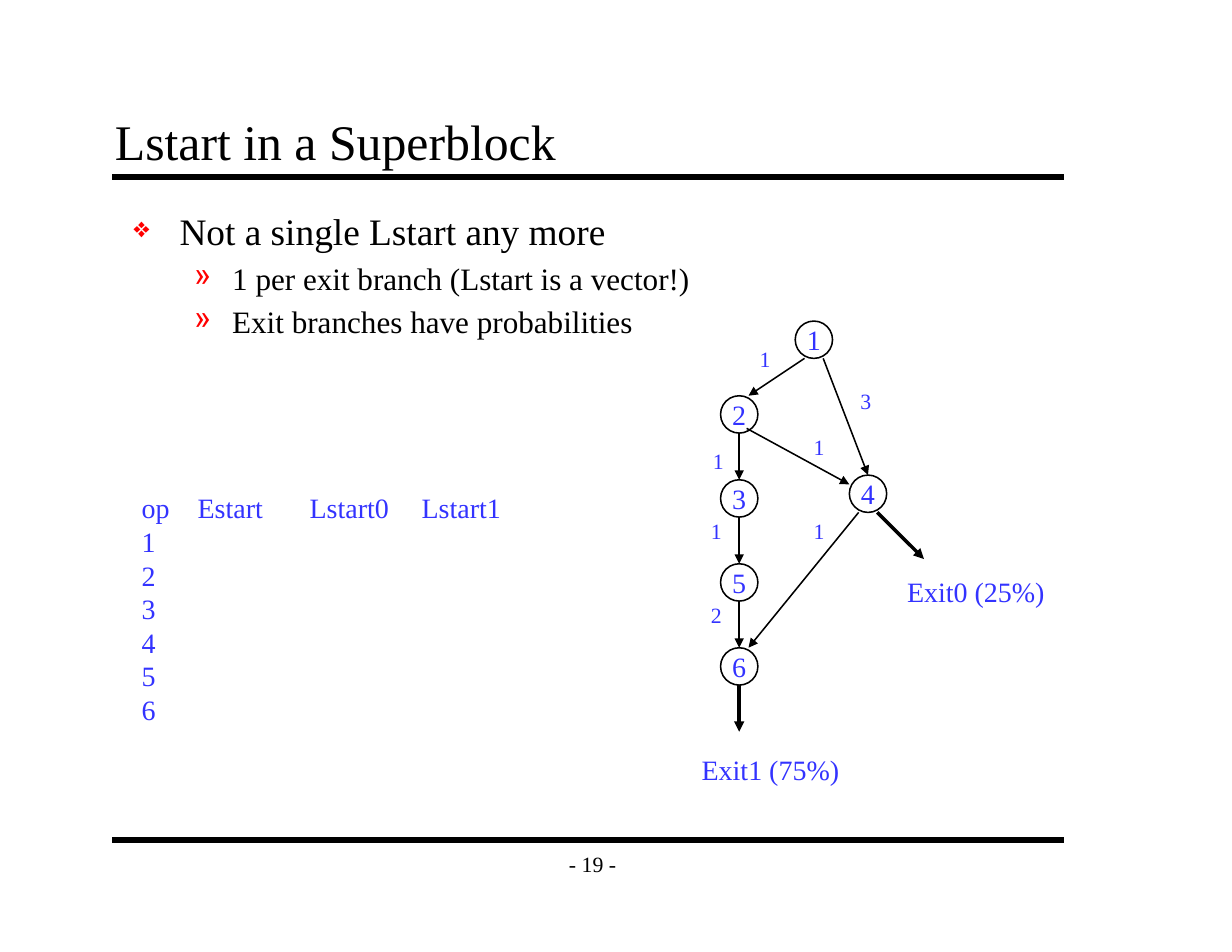
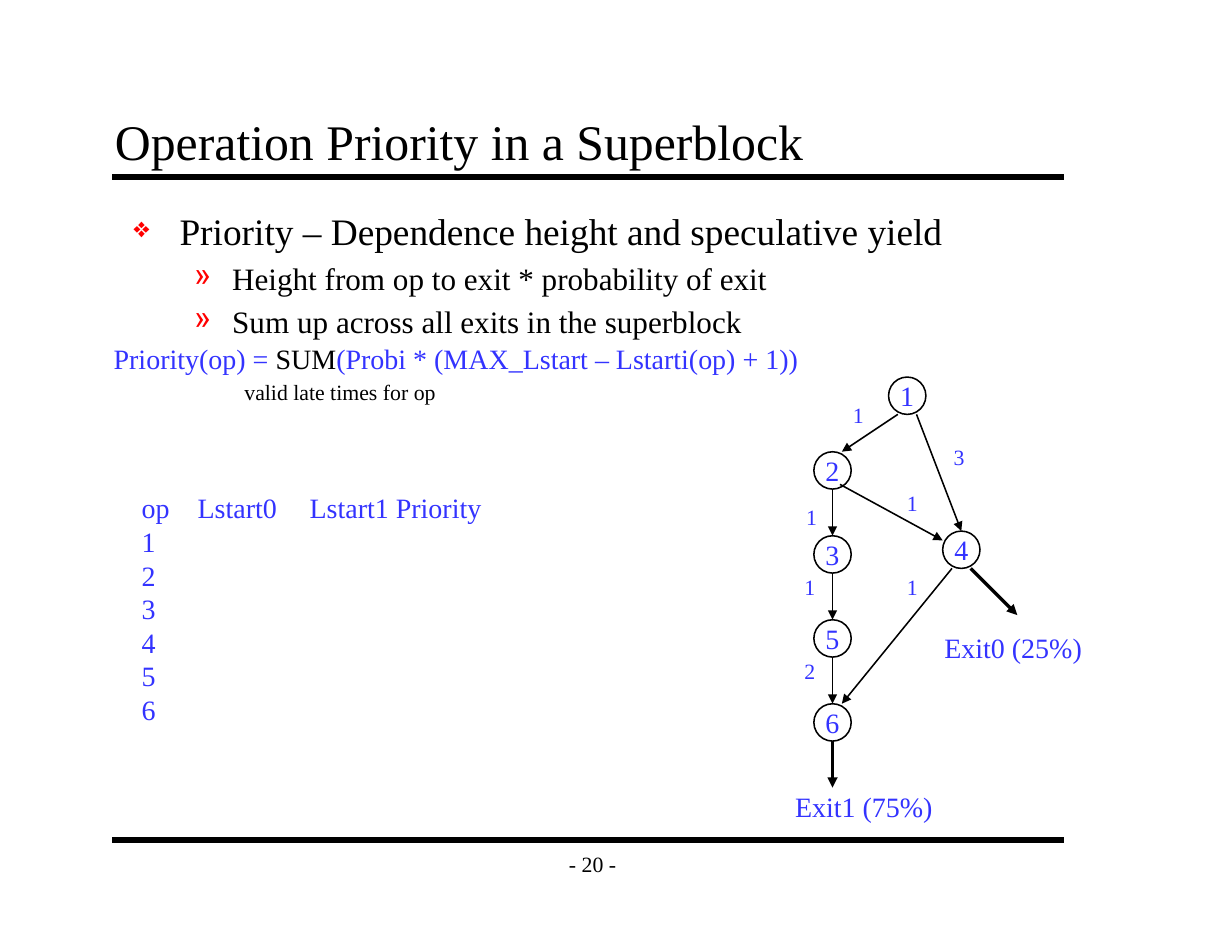
from dataclasses import dataclass

from lxml import etree
from pptx import Presentation
from pptx.dml.color import RGBColor
from pptx.enum.shapes import MSO_CONNECTOR, MSO_SHAPE
from pptx.enum.text import MSO_ANCHOR, MSO_AUTO_SIZE, PP_ALIGN
from pptx.oxml.ns import qn
from pptx.util import Inches, Pt

STRAIGHT = MSO_CONNECTOR.STRAIGHT
OVAL = MSO_SHAPE.OVAL
TOP, MIDDLE, BOTTOM = MSO_ANCHOR.TOP, MSO_ANCHOR.MIDDLE, MSO_ANCHOR.BOTTOM
LEFT, CENTER = PP_ALIGN.LEFT, PP_ALIGN.CENTER
FIT_SHAPE = MSO_AUTO_SIZE.SHAPE_TO_FIT_TEXT

# The slide is a grid of 132 columns and 102 rows, each 1/12 inch.
COLUMNS, ROWS = 132, 102
NODE_SIZE = 4


@dataclass(frozen=True)
class Theme:
    font: str = "Times New Roman"
    ink: RGBColor = RGBColor(0x00, 0x00, 0x00)
    accent: RGBColor = RGBColor(0x33, 0x33, 0xFF)
    bullet: str = "FF0000"
    title: int = 32
    topic: int = 24
    point: int = 20
    text: int = 18
    small: int = 14
    rule: float = 4
    exit_line: float = 2.25
    thin_line: float = 1


THEME = Theme()

# Top left corner of each operation, from the corner of the graph.
NODES = {1: (8, 0), 2: (0, 8), 3: (0, 17), 4: (13.8, 16.5), 5: (0, 26), 6: (0, 35)}

# Source, point on it, target, point on it, latency, place of the latency.
EDGES = [
    (1, (1, 4), 2, (3, 0), "1", (3, 2)),
    (1, (3, 4), 4, (2, 0), "3", (13.8, 6.5)),
    (2, (2, 4), 3, (2, 0), "1", (-2, 13)),
    (2, (2.8, 3.5), 4, (0, 1), "1", (8.8, 11.5)),
    (3, (2, 4), 5, (2, 0), "1", (-2.2, 20.5)),
    (5, (2, 4), 6, (2, 0), "2", (-2.2, 29.5)),
    (4, (1, 4), 6, (3, 0), "1", (8.8, 20.5)),
]

# Source, point on it, reach of the arrow, label.
EXITS = [
    (4, (3, 4), (5, 5), "Exit0 (25%)"),
    (6, (2, 4), (0, 5), "Exit1 (75%)"),
]


def grid(*cells):
    return [Inches(cell / 12) for cell in cells]


def shift(*points):
    """Sum of several (column, row) pairs."""
    return tuple(map(sum, zip(*points)))


def style_runs(paragraph, size, color):
    for run in paragraph.runs:
        run.font.name = THEME.font
        run.font.size = Pt(size)
        run.font.color.rgb = color


def fill_text(shape, text, size, color, align=LEFT, anchor=TOP, wrap=False):
    frame = shape.text_frame
    frame.text = text
    frame.word_wrap = wrap
    frame.vertical_anchor = anchor
    for paragraph in frame.paragraphs:
        paragraph.alignment = align
        style_runs(paragraph, size, color)
    return frame


def set_page_margins(frame):
    frame.margin_left = frame.margin_right = Inches(0.11)
    frame.margin_top = frame.margin_bottom = Inches(0.06)


def add_framed_text(slide, box, text, size, **layout):
    shape = slide.shapes.add_textbox(*grid(*box))
    frame = fill_text(shape, text, size, THEME.ink, **layout)
    set_page_margins(frame)
    return frame


def add_label(slide, place, text, size, color=THEME.accent, width=3.6, height=4):
    """Text that stands free and sizes its own box."""
    shape = slide.shapes.add_textbox(*grid(*place, width, height))
    frame = fill_text(shape, text, size, color)
    frame.auto_size = FIT_SHAPE
    return frame


def add_line(slide, start, end, width, arrow=False):
    line = slide.shapes.add_connector(STRAIGHT, *grid(*start, *end))
    line.line.color.rgb = THEME.ink
    line.line.width = Pt(width)
    if arrow:
        etree.SubElement(line.line._get_or_add_ln(), qn("a:tailEnd"), type="triangle")
    etree.SubElement(line._element.spPr, qn("a:effectLst"))


def add_bullet(paragraph, symbol, margin, hanging, scale=100):
    properties = paragraph._p.get_or_add_pPr()
    properties.set("marL", str(Inches(margin)))
    properties.set("indent", str(-Inches(hanging)))
    before = etree.SubElement(properties, qn("a:spcBef"))
    etree.SubElement(before, qn("a:spcPct"), val="20000")
    color = etree.SubElement(properties, qn("a:buClr"))
    etree.SubElement(color, qn("a:srgbClr"), val=THEME.bullet)
    etree.SubElement(properties, qn("a:buSzPct"), val=str(scale * 1000))
    etree.SubElement(properties, qn("a:buChar"), char=symbol)


def add_outline(slide, topic, points):
    frame = add_framed_text(slide, (13, 21.6, 101, 68.4),
                            "\n".join([topic, *points]), THEME.point, wrap=True)
    first, *others = frame.paragraphs
    style_runs(first, THEME.topic, THEME.ink)
    add_bullet(first, "❖", 0.41, 0.41, scale=75)
    for paragraph in others:
        paragraph.level = 1
        add_bullet(paragraph, "»", 0.88, 0.34)


def add_page(presentation, number, title):
    """Blank slide with title, both rules and page number."""
    slide = presentation.slides.add_slide(presentation.slide_layouts[6])
    for row in (19, 90):
        add_line(slide, (12, row), (114, row), THEME.rule)
    add_framed_text(slide, (59, 90, 9, 5), f"- {number} -", THEME.small,
                    align=CENTER, anchor=MIDDLE)
    add_framed_text(slide, (11, 11, 102, 8), title, THEME.title,
                    anchor=BOTTOM, wrap=True)
    return slide


def add_node(slide, place, operation):
    node = slide.shapes.add_shape(OVAL, *grid(*place, NODE_SIZE, NODE_SIZE))
    node.shadow.inherit = False
    node.fill.background()
    node.line.color.rgb = THEME.ink
    node.line.width = Pt(THEME.thin_line)
    fill_text(node, str(operation), THEME.text, THEME.accent, CENTER, MIDDLE)


def add_dependence_graph(slide, corner, exit_places):
    places = {operation: shift(corner, place) for operation, place in NODES.items()}
    for operation, place in places.items():
        add_node(slide, place, operation)
    for source, start, target, end, latency, label_place in EDGES:
        add_line(slide, shift(places[source], start), shift(places[target], end),
                 THEME.thin_line, arrow=True)
        add_label(slide, shift(corner, label_place), latency, THEME.small)
    for (source, start, reach, label), label_place in zip(EXITS, exit_places):
        tip = shift(places[source], start)
        add_line(slide, tip, shift(tip, reach), THEME.exit_line, arrow=True)
        add_label(slide, label_place, label, THEME.text, width=17.2, height=4.8)


def add_operation_list(slide, heading, width):
    lines = [heading, *map(str, NODES)]
    add_label(slide, (14, 52), "\n".join(lines), THEME.text, width=width, height=26.4)


def add_priority_formula(slide):
    frame = add_label(slide, (11, 36), "Priority(op) = ", THEME.text,
                      width=75.8, height=4.8)
    paragraph = frame.paragraphs[0]
    for text in ("SUM", "(Probi * (MAX_Lstart – Lstarti(op) + 1))"):
        paragraph.add_run().text = text
    style_runs(paragraph, THEME.text, THEME.accent)
    paragraph.runs[1].font.color.rgb = THEME.ink
    add_label(slide, (25, 40), "valid late times for op", THEME.small, THEME.ink,
              width=22.9)


def main():
    presentation = Presentation()
    presentation.slide_width, presentation.slide_height = grid(COLUMNS, ROWS)

    lstart = add_page(presentation, 19, "Lstart in a Superblock")
    add_outline(lstart, "Not a single Lstart any more",
                ["1 per exit branch (Lstart is a vector!)",
                 "Exit branches have probabilities"])
    add_dependence_graph(lstart, (77.2, 34.4), [(96, 61), (74, 80)])
    add_operation_list(lstart, "op\tEstart\tLstart0\tLstart1", 46.9)

    priority = add_page(presentation, 20, "Operation Priority in a Superblock")
    add_outline(priority, "Priority – Dependence height and speculative yield",
                ["Height from op to exit * probability of exit",
                 "Sum up across all exits in the superblock"])
    add_dependence_graph(priority, (87.2, 40.4), [(100, 67), (84, 84)])
    add_operation_list(priority, "op\tLstart0\tLstart1 Priority", 44.9)
    add_priority_formula(priority)

    presentation.save("out.pptx")


if __name__ == "__main__":
    main()
